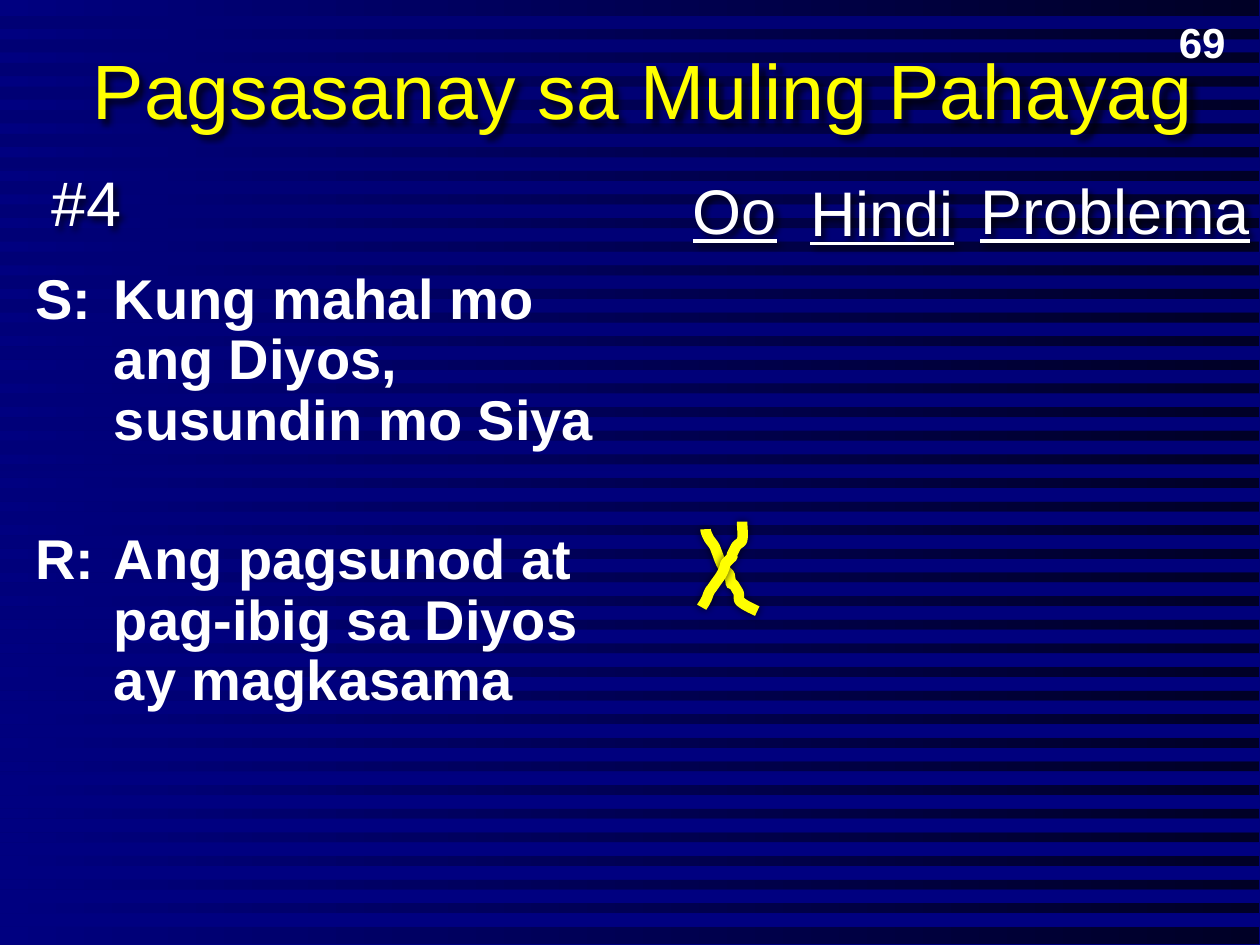
from lxml.etree import SubElement
from pptx import Presentation
from pptx.dml.color import RGBColor
from pptx.enum.shapes import MSO_SHAPE
from pptx.enum.text import MSO_ANCHOR, PP_ALIGN
from pptx.oxml.ns import qn
from pptx.util import Pt

WIDTH, HEIGHT = 720, 540
FONT = "Arial"
COLORS = {
    "navy": "000080",
    "deep_navy": "000074",
    "midnight": "000026",
    "yellow": "FFFF00",
    "white": "FFFFFF",
    "black": "000000",
}
BAND_TOP, BAND_HEIGHT, BAND_STEP, BAND_COUNT = 9, 7.5, 13.5, 39

# Each stroke is a start point followed by triples of cubic curve points.
CROSS_STROKES = [
    [(403.2, 302.4),
     (403.2, 303.8), (403.9, 305.3), (404.6, 306.7),
     (405.4, 308.9), (408.2, 311), (409, 313.9),
     (411.8, 321.1), (411.8, 323.3), (416.9, 328.3),
     (419, 340.6), (415.4, 326.2), (421.9, 338.4),
     (422.6, 339.8), (421.9, 342), (422.6, 343.4),
     (424.8, 345.6), (429.1, 347.5), (432.7, 349.2)],
    [(401, 347),
     (401.8, 345.6), (402.5, 344.9), (403.2, 343.4),
     (404.6, 341.3), (404.6, 338.4), (406.8, 336.2),
     (411.1, 329.8), (413.3, 328.3), (414.7, 321.8),
     (423.4, 313.2), (414, 324), (420.5, 312.5),
     (421.2, 311), (423.4, 310.3), (424.1, 308.9),
     (424.8, 306), (424.1, 300.9), (424.1, 298.1)],
]


def color(name):
    return RGBColor.from_string(COLORS[name])


def set_gradient(fill, first, last, angle):
    fill.gradient()
    fill.gradient_angle = angle
    for stop, name in zip(fill.gradient_stops, (first, last)):
        stop.color.rgb = color(name)


def add_shadow(shape, blur, distance):
    """Cast a soft black shadow towards the lower right."""
    shape.shadow.inherit = False
    effects = shape._element.spPr.find(qn("a:effectLst"))
    shadow = SubElement(effects, qn("a:outerShdw"), blurRad=str(Pt(blur)),
                        dist=str(Pt(distance)), dir="2700000")
    shadow_color = SubElement(shadow, qn("a:srgbClr"), val=COLORS["black"])
    SubElement(shadow_color, qn("a:alpha"), val="75000")


def add_text(slide, text, left, top, width, height, size=36, color_name="white",
             bold=False, underline=False, align=PP_ALIGN.LEFT,
             anchor=MSO_ANCHOR.TOP, shadow=True):
    """Add a text box with one paragraph per line and return it."""
    box = slide.shapes.add_textbox(Pt(left), Pt(top), Pt(width), Pt(height))
    frame = box.text_frame
    frame.word_wrap = True
    frame.vertical_anchor = anchor
    frame.text = text
    for paragraph in frame.paragraphs:
        paragraph.alignment = align
        font = paragraph.runs[0].font
        font.name, font.size = FONT, Pt(size)
        font.bold, font.underline = bold, underline
        font.color.rgb = color(color_name)
    if shadow:
        add_shadow(box, blur=4, distance=3)
    return box


def add_outline(slide, points, close):
    vertices = [(Pt(x), Pt(y)) for x, y in points]
    builder = slide.shapes.build_freeform(*vertices[0], scale=1.0)
    builder.add_line_segments(vertices[1:], close=close)
    shape = builder.convert_to_shape()
    shape.shadow.inherit = False
    return shape


def add_background(slide):
    set_gradient(slide.background.fill, "deep_navy", "navy", 270)
    panel = slide.shapes.add_shape(MSO_SHAPE.RECTANGLE, 0, 0, Pt(719.3), Pt(539.3))
    panel.shadow.inherit = False
    panel.line.fill.background()
    set_gradient(panel.fill, "navy", "midnight", 0)

    points = []
    for index in range(BAND_COUNT):
        top = BAND_TOP + index * BAND_STEP
        bottom = top + BAND_HEIGHT
        points += [(WIDTH, top), (0, top), (0, bottom), (WIDTH, bottom)]
    bands = add_outline(slide, points, close=True)
    bands.line.fill.background()
    set_gradient(bands.fill, "deep_navy", "navy", 270)


def curve_points(controls, steps=6):
    """Sample a chain of cubic curves."""
    points = [controls[0]]
    for first in range(0, len(controls) - 1, 3):
        segment = controls[first:first + 4]
        for step in range(1, steps + 1):
            t = step / steps
            weights = ((1 - t) ** 3, 3 * t * (1 - t) ** 2, 3 * t ** 2 * (1 - t), t ** 3)
            points.append(tuple(sum(w * value for w, value in zip(weights, axis))
                                for axis in zip(*segment)))
    return points


def add_cross(slide):
    for controls in CROSS_STROKES:
        stroke = add_outline(slide, curve_points(controls), close=False)
        stroke.fill.background()
        stroke.line.color.rgb = color("yellow")
        stroke.line.width = Pt(6)
        add_shadow(stroke, blur=5, distance=0)


def add_statements(slide):
    """Add the two labelled statements with hanging indents."""
    body = add_text(
        slide,
        "S:\tKung mahal mo ang Diyos, susundin mo Siya\n"
        "R:\tAng pagsunod at pag-ibig sa Diyos ay magkasama",
        13, 151.2, 358.6, 380, size=32, bold=True, shadow=False)
    paragraphs = body.text_frame.paragraphs
    for paragraph in paragraphs:
        paragraph.line_spacing = 0.9
        properties = paragraph._p.get_or_add_pPr()
        properties.set("marL", str(Pt(45)))
        properties.set("indent", str(Pt(-45)))
    paragraphs[1].space_before = Pt(45)


def main():
    presentation = Presentation()
    presentation.slide_width, presentation.slide_height = Pt(WIDTH), Pt(HEIGHT)
    slide = presentation.slides.add_slide(presentation.slide_layouts[6])

    add_background(slide)
    add_text(slide, "Pagsasanay sa Muling Pahayag", 41.8, 5.8, 651.6, 90, size=44,
             color_name="yellow", align=PP_ALIGN.CENTER, anchor=MSO_ANCHOR.MIDDLE)
    add_statements(slide)
    add_text(slide, "69", 660, 5.8, 54, 36, size=24, bold=True,
             align=PP_ALIGN.CENTER, shadow=False)
    for heading, left, top, width in (("Oo", 388.8, 94.3, 82),
                                      ("Hindi", 455.8, 95.8, 108),
                                      ("Problema", 553, 94.3, 182)):
        add_text(slide, heading, left, top, width, 41, underline=True)
    add_text(slide, "#4", 22.3, 90, 90, 46.8)
    add_cross(slide)

    presentation.save("out.pptx")


if __name__ == "__main__":
    main()
